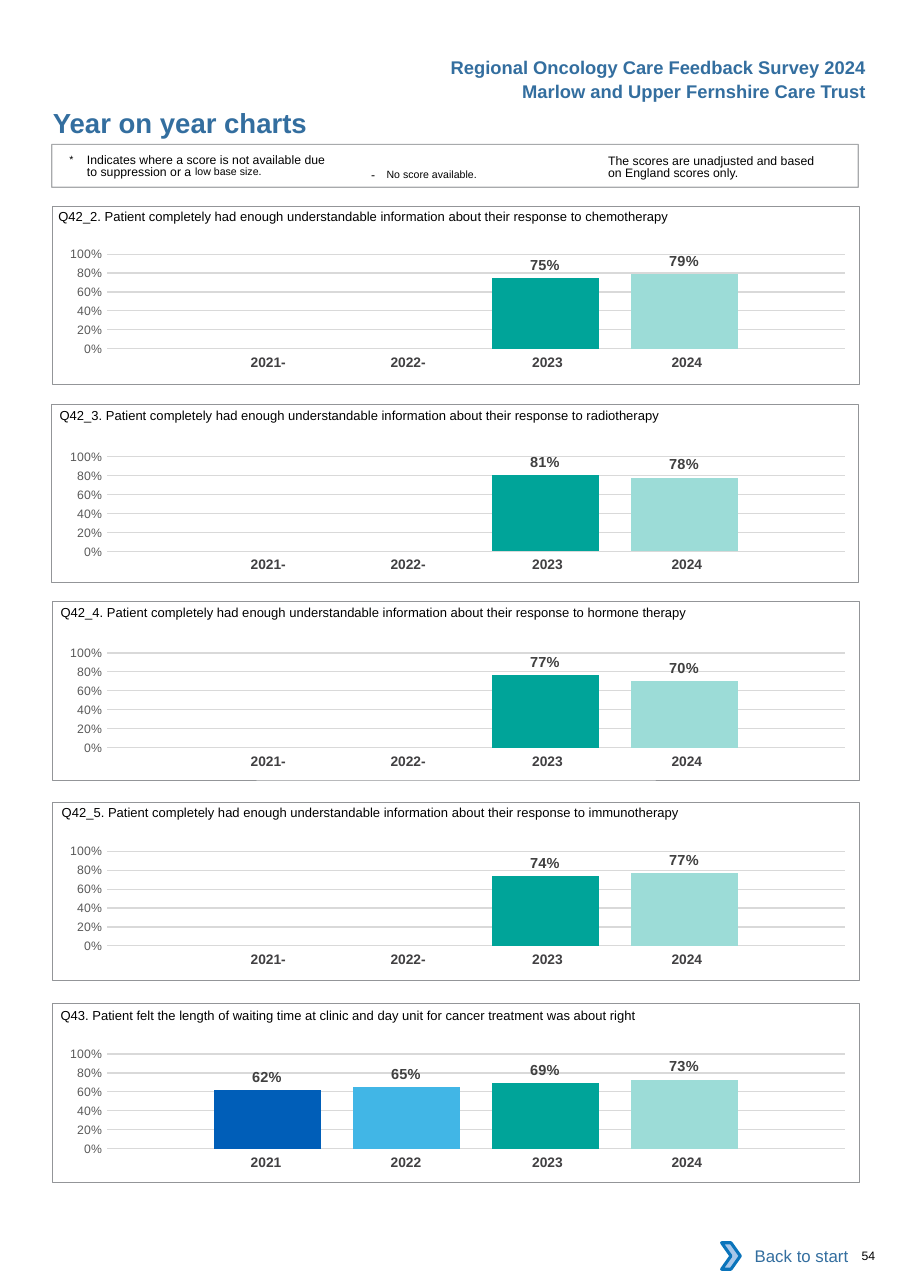
from lxml.etree import SubElement
from pptx import Presentation
from pptx.chart.data import CategoryChartData
from pptx.dml.color import RGBColor
from pptx.enum.chart import XL_CHART_TYPE as ChartType, XL_LABEL_POSITION as LabelPos
from pptx.enum.chart import XL_TICK_MARK as TickMark
from pptx.enum.shapes import MSO_SHAPE as Shape
from pptx.enum.text import MSO_ANCHOR as Anchor, PP_ALIGN as Align
from pptx.oxml.ns import qn
from pptx.util import Inches, Pt

BLUE, GREY, BLACK = "336E9F", "939598", "000000"
YEARS = {"2021": "005EB8", "2022": "41B6E6", "2023": "00A499", "2024": "9CDCD7"}
COLUMN_WIDTHS = [1.27, 1.27, 1.34, 1.27]
RIGHT_INSETS = [0, 0, 0.04, 0.12]
PLOT_AREA = {"x": 0.079, "y": 0.145, "w": 0.915, "h": 0.666}
INFO = "Patient completely had enough understandable information about their response to "

# Question, its left and top, frame left and top, chart top, scores by year
PANELS = [
    ("Q42_2. " + INFO + "chemotherapy", 0.53, 1.8, 0.48, 1.87, 2.12, (None, None, 0.75, 0.79)),
    ("Q42_3. " + INFO + "radiotherapy", 0.54, 3.61, 0.47, 3.67, 3.96, (None, None, 0.81, 0.78)),
    ("Q42_4. " + INFO + "hormone therapy", 0.55, 5.4, 0.48, 5.46, 5.74, (None, None, 0.77, 0.7)),
    ("Q42_5. " + INFO + "immunotherapy", 0.56, 7.21, 0.48, 7.28, 7.54, (None, None, 0.74, 0.77)),
    ("Q43. Patient felt the length of waiting time at clinic and day unit for cancer treatment "
     "was about right", 0.55, 9.05, 0.48, 9.11, 9.38, (0.62, 0.65, 0.69, 0.73)),
]


def rgb(value):
    return RGBColor.from_string(value)


def style_font(font, size, color=BLACK, bold=False, name="Arial"):
    font.name, font.size, font.bold = name, Pt(size), bold
    font.color.rgb = rgb(color)


def write(frame, *spans, size=8, color=BLACK, bold=False, align=Align.LEFT, line=None,
          hanging=0):
    """Each span is a text, or a tuple of text, size, raise in percent and letter spacing."""
    para = frame.paragraphs[0]
    para.alignment = align
    if line:
        para.line_spacing = Pt(line)
    if hanging:
        properties = para._p.get_or_add_pPr()
        properties.set("marL", str(Inches(hanging)))
        properties.set("indent", str(-Inches(hanging)))
    for item in spans:
        text, span_size, lift, spacing = item if isinstance(item, tuple) else (item, size, 0, 0)
        span = para.add_run()
        span.text = text
        style_font(span.font, span_size, color, bold)
        if lift:
            span._r.get_or_add_rPr().set("baseline", str(lift * 1000))
        if spacing:
            span._r.get_or_add_rPr().set("spc", str(int(spacing * 100)))


def set_insets(target, left, top, right, bottom):
    target.margin_left, target.margin_top = Inches(left), Inches(top)
    target.margin_right, target.margin_bottom = Inches(right), Inches(bottom)


class SurveyPage:
    def __init__(self, page):
        self.shapes = page.shapes

    def text(self, place, *spans, insets=(0, 0, 0, 0), wrap=True, **style):
        box = self.shapes.add_textbox(*map(Inches, place))
        box.text_frame.word_wrap = wrap
        set_insets(box.text_frame, *insets)
        write(box.text_frame, *spans, **style)

    def shape(self, place, kind=Shape.RECTANGLE, fill=None, line=None, width=0.5, opacity=100):
        shape = self.shapes.add_shape(kind, *map(Inches, place))
        shape.shadow.inherit = False
        if fill:
            shape.fill.solid()
            shape.fill.fore_color.rgb = rgb(fill)
        else:
            shape.fill.background()
        if line:
            shape.line.color.rgb = rgb(line)
            shape.line.width = Pt(width)
        else:
            shape.line.fill.background()
        if opacity < 100:
            color = shape.line._ln.find(".//" + qn("a:srgbClr"))
            SubElement(color, qn("a:alpha")).set("val", str(opacity * 1000))
        return shape

    def year_table(self, top, scores):
        place = (1.73, top, sum(COLUMN_WIDTHS), 0.27)
        table = self.shapes.add_table(1, len(YEARS), *map(Inches, place)).table
        table.first_row = table.horz_banding = False
        for index, (year, score) in enumerate(zip(YEARS, scores)):
            table.columns[index].width = Inches(COLUMN_WIDTHS[index])
            cell = table.cell(0, index)
            cell.fill.background()
            missing = score is None
            set_insets(cell, 0.14 if missing else 0.1, 0.05, RIGHT_INSETS[index], 0.05)
            write(cell.text_frame, year + "-" if missing else year, size=9, color="414042",
                  bold=True, align=Align.CENTER)

    def score_chart(self, top, scores):
        data = CategoryChartData(number_format="0%")
        data.categories = ["1"]
        for number, score in enumerate(scores, 1):
            data.add_series(f"Series {number}", [score])
        place = map(Inches, (0.39, top, 7.32, 1.29))
        chart = self.shapes.add_chart(ChartType.COLUMN_CLUSTERED, *place, data).chart
        chart.has_legend = chart.has_title = False
        style_font(chart.font, 10, name="Calibri")
        self.format_axes(chart)
        plot = chart.plots[0]
        plot.gap_width, plot.overlap, plot.vary_by_categories = 200, -30, False
        for series, color in zip(plot.series, YEARS.values()):
            series.format.fill.solid()
            series.format.fill.fore_color.rgb = rgb(color)
            labels = series.data_labels
            labels.show_value, labels.position = True, LabelPos.OUTSIDE_END
            labels.number_format, labels.number_format_is_linked = "0%", False
            style_font(labels.font, 9.5, "404040", True)
        self.place_plot(chart)

    def format_axes(self, chart):
        chart.category_axis.visible = False
        axis = chart.value_axis
        axis.minimum_scale, axis.maximum_scale, axis.major_unit = 0, 1, 0.2
        axis.major_tick_mark = axis.minor_tick_mark = TickMark.NONE
        axis.format.line.fill.background()
        grid = axis.major_gridlines.format.line
        grid.color.rgb, grid.width = rgb("D9D9D9"), Pt(0.75)
        labels = axis.tick_labels
        labels.number_format, labels.number_format_is_linked = "0%", False
        style_font(labels.font, 8, "595959")

    def place_plot(self, chart):
        area = chart._chartSpace.chart.plotArea
        layout = area.find(qn("c:layout"))
        if layout is None:
            layout = SubElement(area, qn("c:layout"))
            area.insert(0, layout)
        manual = SubElement(layout, qn("c:manualLayout"))
        settings = {"layoutTarget": "inner", "xMode": "edge", "yMode": "edge", **PLOT_AREA}
        for tag, value in settings.items():
            SubElement(manual, qn("c:" + tag)).set("val", str(value))

    def panel(self, question, left, top, frame_left, frame_top, chart_top, scores):
        self.text((left, top, 7.22, 0.24), question, size=8.5, insets=(0, 0.09, 0, 0))
        self.year_table(chart_top + 1.05, scores)
        self.score_chart(chart_top, scores)
        self.shape((frame_left, frame_top, 7.32, 1.62), line=GREY)


def main():
    deck = Presentation()
    deck.slide_width, deck.slide_height = Inches(8.26), Inches(11.69)
    page = SurveyPage(deck.slides.add_slide(deck.slide_layouts[6]))

    # Header
    heading = dict(size=12, color=BLUE, bold=True, align=Align.RIGHT, wrap=False,
                   insets=(0.1, 0.05, 0.1, 0.05))
    page.text((3.92, 0.46, 4.04, 0.3), "Regional Oncology Care Feedback Survey 2024", **heading)
    page.text((4.58, 0.68, 3.38, 0.3), "Marlow and Upper Fernshire Care Trust", **heading)
    page.text((0.48, 0.96, 4.5, 0.3), "Year on year charts", size=18, color=BLUE, bold=True)

    # Legend
    note = dict(line=8.1, insets=(0, 0.03, 0, 0))
    page.text((0.63, 1.38, 2.36, 0.27), ("*\t", 12, 3, 0),
              "Indicates where a score is not available due to suppression or a ",
              ("low base size.", 12, 7, 0), hanging=0.16, **note)
    page.text((3.27, 1.41, 1.83, 0.24), ("- ", 8, 0, 2.6), ("No score available.", 12, 3, 0),
              insets=(0.1, 0.05, 0.1, 0.05))
    page.text((5.52, 1.38, 1.94, 0.27),
              "The scores are unadjusted and based on England scores only.", **note)
    page.shape((0.47, 1.31, 7.32, 0.39), line=GREY, width=0.75, opacity=80)

    # Question panels
    for panel in PANELS:
        page.panel(*panel)

    # Footer
    button = page.shape((6.62, 11.19, 1.18, 0.42), fill="FFFFFF")
    button.text_frame.vertical_anchor = Anchor.MIDDLE
    write(button.text_frame, "Back to start", size=11, color=BLUE, align=Align.RIGHT)
    page.shape((6.55, 11.28, 0.17, 0.24), Shape.CHEVRON, fill="A8C7E9", line="0A74BB", width=2)
    page.text((7.82, 11.33, 0.41, 0.13), "54")

    deck.save("out.pptx")


if __name__ == "__main__":
    main()
